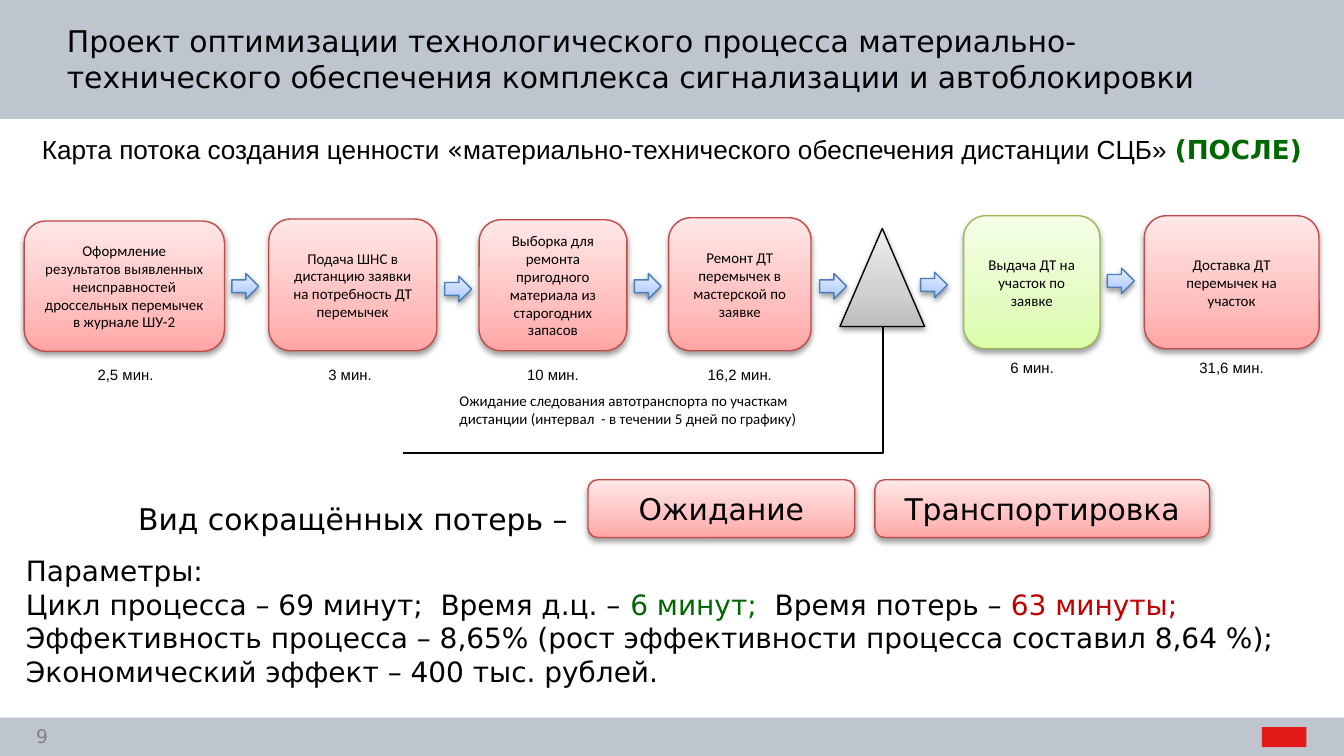
"""Build the value stream map slide for the optimised supply process."""
from lxml.etree import SubElement
from pptx import Presentation
from pptx.dml.color import RGBColor
from pptx.enum.shapes import MSO_CONNECTOR, MSO_SHAPE
from pptx.enum.text import MSO_ANCHOR as Anchor, PP_ALIGN as Align
from pptx.oxml.ns import qn
from pptx.util import Emu, Pt

PX = 4572
BLACK = RGBColor(0, 0, 0)
BAND = RGBColor(0xBF, 0xC5, 0xCE)
GRAY = RGBColor(0x80, 0x80, 0x80)
GREEN = RGBColor(0x00, 0x66, 0x00)
DARK_RED = RGBColor(0xC0, 0x00, 0x00)
LOGO_RED = RGBColor(0xE2, 0x1A, 0x1A)
PINK_LINE = RGBColor(0xBF, 0x4C, 0x48)
LIME_LINE = RGBColor(0x98, 0xB9, 0x55)
BLUE_LINE = RGBColor(0x4B, 0x7E, 0xBC)
PINK = (RGBColor(0xFF, 0xA6, 0xA5), RGBColor(0xFF, 0xC0, 0xBF), RGBColor(0xFF, 0xE7, 0xE7))
LIME = (RGBColor(0xDA, 0xFD, 0xA7), RGBColor(0xE4, 0xFC, 0xC2), RGBColor(0xF5, 0xFF, 0xE7))
BLUE = (RGBColor(0xA4, 0xC4, 0xFF), RGBColor(0xBF, 0xD4, 0xFF), RGBColor(0xE6, 0xEE, 0xFF))
SILVER = (RGBColor(0xBD, 0xBD, 0xBD), RGBColor(0xD1, 0xD1, 0xD1), RGBColor(0xEE, 0xEE, 0xEE))
SANS, ARIAL, CALIBRI = "DejaVu Sans", "Arial", "Calibri"

STEPS = [
    ((36, 329, 298, 194), (63, 544, 248), "2,5 мин.", PINK, PINK_LINE,
     "Оформление результатов выявленных неисправностей дроссельных перемычек в журнале ШУ-2"),
    ((400, 326, 250, 196), (416, 544, 210), "3 мин.", PINK, PINK_LINE,
     "Подача ШНС в дистанцию заявки на потребность ДТ перемычек"),
    ((713, 327, 220, 195), (713, 544, 220), "10 мин.", PINK, PINK_LINE,
     "Выборка для ремонта пригодного материала из старогодних запасов"),
    ((995, 324, 212, 198), (995, 544, 212), "16,2 мин.", PINK, PINK_LINE,
     "Ремонт ДТ перемычек в мастерской по заявке"),
    ((1434, 321, 203, 198), (1434, 533, 204), "6 мин.", LIME, LIME_LINE,
     "Выдача ДТ на участок по заявке"),
    ((1703, 321, 260, 198), (1703, 533, 260), "31,6 мин.", PINK, PINK_LINE,
     "Доставка ДТ перемычек на участок"),
]
ARROWS = [(345, 407), (662, 411), (944, 407), (1220, 407), (1370, 405), (1648, 399)]
LOSSES = [("Ожидание", 875, 397), ("Транспортировка", 1302, 498)]
PARAMETERS = [
    "Параметры:",
    [("Цикл процесса – 69 минут;  Время д.ц. – ", {}), ("6 минут;  ", {"color": GREEN}),
     ("Время потерь – ", {}), ("63 минуты;", {"color": DARK_RED})],
    "Эффективность процесса – 8,65% (рост эффективности процесса составил 8,64 %);",
    "Экономический эффект – 400 тыс. рублей.",
]
SUBTITLE = [[
    ("Карта потока создания ценности ", {}), ("«", {"font": SANS}),
    ("материально-технического обеспечения дистанции СЦБ» ", {}),
    ("(ПОСЛЕ)", {"font": SANS, "color": GREEN, "bold": True}),
]]


def write(frame, text, size=16, font=SANS, color=BLACK, align=Align.LEFT,
          anchor=Anchor.MIDDLE, margin=None):
    """Fill a frame with a string or with paragraphs made of strings or runs."""
    frame.word_wrap = True
    frame.vertical_anchor = anchor
    if margin is not None:
        frame.margin_left = frame.margin_right = Emu(margin * PX)
        frame.margin_top = frame.margin_bottom = Emu(margin * PX)
    for index, content in enumerate([text] if isinstance(text, str) else text):
        paragraph = frame.add_paragraph() if index else frame.paragraphs[0]
        paragraph.alignment = align
        runs = [(content, {})] if isinstance(content, str) else content
        for words, style in runs:
            for number, line in enumerate(words.split("\n")):
                if number:
                    paragraph.add_line_break()
                run = paragraph.add_run()
                run.text = line
                run.font.size = Pt(size)
                run.font.name = style.get("font", font)
                run.font.bold = style.get("bold", False)
                run.font.color.rgb = style.get("color", color)


class SlideBuilder:
    """Hold the current slide and the shared look of its elements."""

    def __init__(self, slide):
        self.slide = slide
        self.line_width = Pt(0.75)

    def plain(self, box, color):
        shape = self.slide.shapes.add_shape(MSO_SHAPE.RECTANGLE, *(Emu(v * PX) for v in box))
        shape.shadow.inherit = False
        shape.fill.solid()
        shape.fill.fore_color.rgb = color
        shape.line.fill.background()

    def text(self, box, text, **style):
        shape = self.slide.shapes.add_textbox(*(Emu(v * PX) for v in box))
        write(shape.text_frame, text, **style)

    def glossy(self, kind, box, colors, line, text=None, **style):
        shape = self.slide.shapes.add_shape(kind, *(Emu(v * PX) for v in box))
        shape.fill.gradient()
        shape.fill.gradient_angle = 90
        properties = shape._element.spPr
        stops = properties.find(qn("a:gradFill")).find(qn("a:gsLst"))
        stops.clear()
        for position, color in zip((0, 35000, 100000), colors):
            stop = SubElement(stops, qn("a:gs"), pos=str(position))
            SubElement(stop, qn("a:srgbClr"), val=str(color))
        shape.line.color.rgb = line
        shape.line.width = self.line_width
        shape.shadow.inherit = False
        shadow = SubElement(properties.find(qn("a:effectLst")), qn("a:outerShdw"),
                            blurRad="40000", dist="20000", dir="5400000", rotWithShape="0")
        tint = SubElement(shadow, qn("a:srgbClr"), val=str(BLACK))
        SubElement(tint, qn("a:alpha"), val="38000")
        if text:
            write(shape.text_frame, text, align=Align.CENTER, **style)

    def corner(self, begin, end):
        """Draw a line down from begin, then sideways to end."""
        (right, top), (left, bottom) = begin, end
        middle_x, middle_y = (left + right) // 2, (top + bottom) // 2
        half_width, half_height = (bottom - top) // 2, (right - left) // 2
        points = (middle_x - half_width, middle_y - half_height,
                  middle_x + half_width, middle_y + half_height)
        connector = self.slide.shapes.add_connector(
            MSO_CONNECTOR.ELBOW, *(Emu(v * PX) for v in points))
        properties = connector._element.spPr
        properties.find(qn("a:prstGeom")).set("prst", "bentConnector2")
        properties.find(qn("a:xfrm")).set("rot", "5400000")
        connector.line.color.rgb = BLACK
        connector.line.width = self.line_width
        SubElement(properties, qn("a:effectLst"))


def main():
    presentation = Presentation()
    presentation.slide_width, presentation.slide_height = Emu(2000 * PX), Emu(1125 * PX)
    builder = SlideBuilder(presentation.slides.add_slide(presentation.slide_layouts[6]))

    builder.plain((0, 0, 2000, 177), BAND)
    builder.plain((0, 1068, 2000, 57), BAND)
    builder.plain((1878, 1082, 66, 30), LOGO_RED)
    builder.text((80, 3, 1920, 168),
                 "Проект оптимизации технологического процесса материально-\n"
                 "технического обеспечения комплекса сигнализации и автоблокировки")
    builder.text((34, 1068, 98, 56), "9", size=10, color=GRAY)
    builder.text((0, 189, 2000, 114), SUBTITLE, size=14, font=ARIAL,
                 align=Align.CENTER, anchor=Anchor.TOP)

    for box, (left, top, width), duration, colors, line, label in STEPS:
        builder.glossy(MSO_SHAPE.ROUNDED_RECTANGLE, box, colors, line, label,
                       size=8, font=CALIBRI)
        builder.text((left, top, width, 26), duration, size=8, font=ARIAL,
                     align=Align.CENTER, anchor=Anchor.TOP, margin=0)
    for left, top in ARROWS:
        builder.glossy(MSO_SHAPE.RIGHT_ARROW, (left, top, 40, 38), BLUE, BLUE_LINE)
    builder.glossy(MSO_SHAPE.ISOSCELES_TRIANGLE, (1250, 340, 126, 146), SILVER, BLACK)
    builder.corner((1314, 486), (600, 674))
    builder.text((664, 573, 584, 100),
                 "Ожидание следования автотранспорта по участкам дистанции "
                 "(интервал  - в течении 5 дней по графику)",
                 size=8, font=CALIBRI, anchor=Anchor.TOP)

    builder.text((186, 741, 680, 60), "Вид сокращённых потерь –")
    for label, left, width in LOSSES:
        builder.glossy(MSO_SHAPE.ROUNDED_RECTANGLE, (left, 714, width, 86),
                       PINK, PINK_LINE, label)
    builder.text((19, 814, 1981, 222), PARAMETERS, size=15, anchor=Anchor.TOP)
    presentation.save("out.pptx")


if __name__ == "__main__":
    main()
